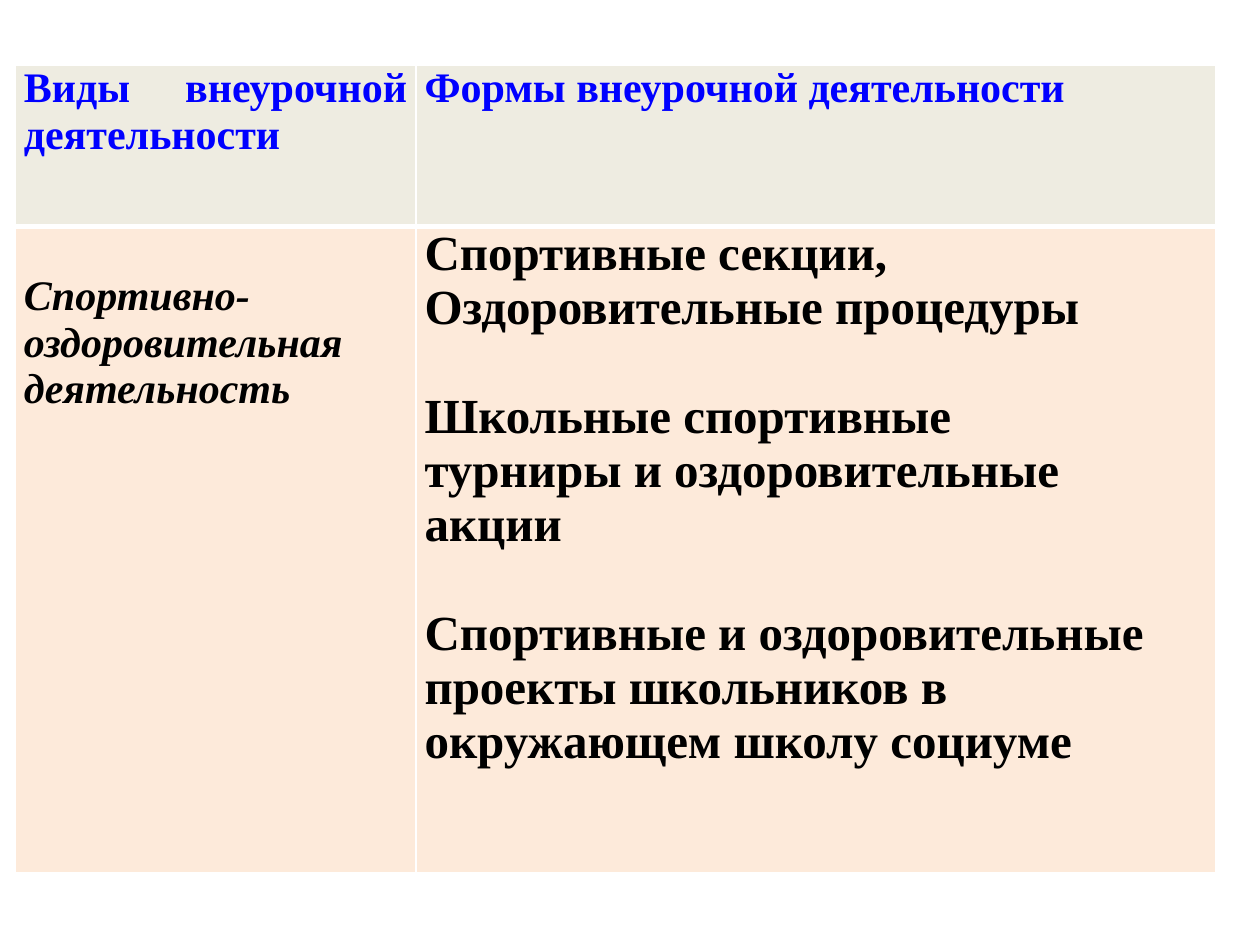
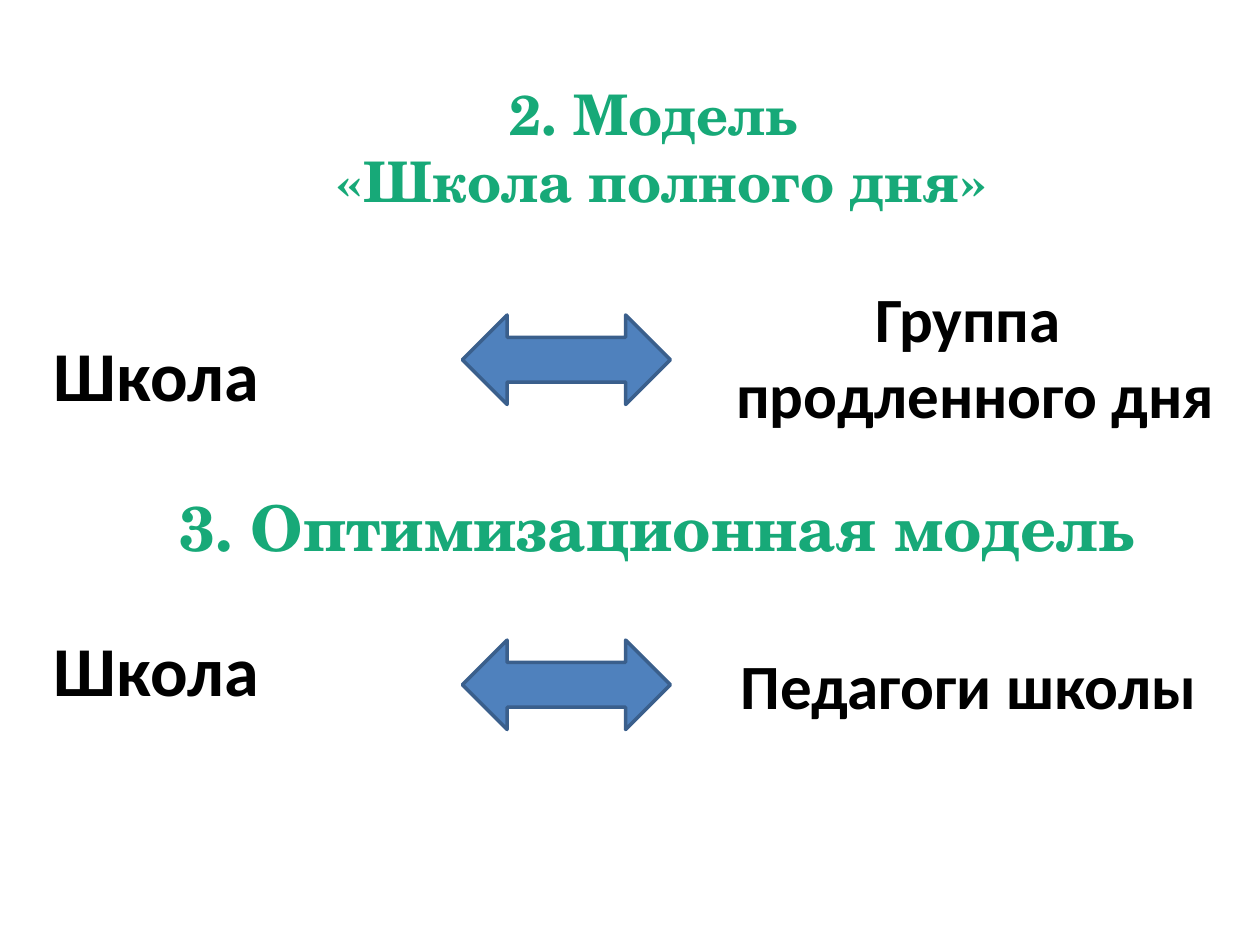
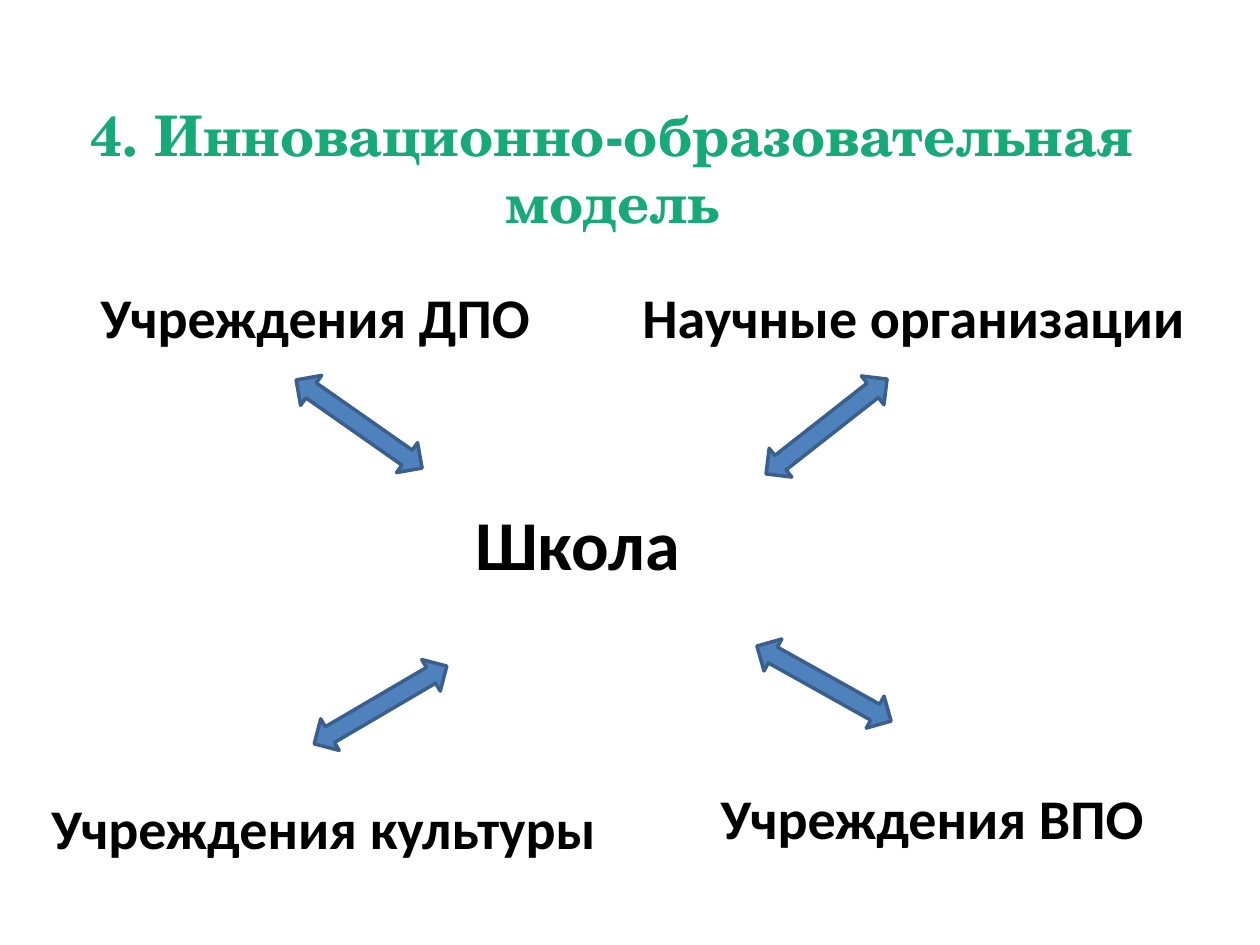
from dataclasses import dataclass

from lxml import etree
from pptx import Presentation
from pptx.dml.color import RGBColor
from pptx.enum.shapes import MSO_SHAPE
from pptx.enum.text import MSO_AUTO_SIZE, PP_ALIGN
from pptx.oxml.ns import qn
from pptx.slide import Slide
from pptx.table import _Cell
from pptx.util import Inches, Pt

ARROW = MSO_SHAPE.LEFT_RIGHT_ARROW
GROW = MSO_AUTO_SIZE.SHAPE_TO_FIT_TEXT
LEFT, CENTER, JUSTIFY = PP_ALIGN.LEFT, PP_ALIGN.CENTER, PP_ALIGN.JUSTIFY

COLORS = {
    "title": "17A978",
    "text": "000000",
    "head": "0000FF",
    "head_fill": "EEECE1",
    "body_fill": "FDEADA",
    "border": "FFFFFF",
    "arrow": "4F81BD",
    "edge": "3A5F8C",
}


@dataclass(frozen=True)
class Style:
    font: str
    size: int
    color: str
    italic: bool = False


@dataclass(frozen=True)
class Label:
    lines: tuple[str, ...]
    left: float
    top: float
    width: float
    height: float
    style: Style
    align: PP_ALIGN = CENTER
    wrap: bool = True


@dataclass(frozen=True)
class Arrow:
    left: float
    top: float
    width: float
    height: float
    angle: float = 0


@dataclass(frozen=True)
class Entry:
    lines: tuple[str, ...]
    style: Style
    fill: str
    align: PP_ALIGN = JUSTIFY
    top: float = 0
    gaps: tuple[int, ...] = ()


TITLE = Style("TeX Gyre Schola", 32, "title")
TITLE_BIG = Style("TeX Gyre Schola", 36, "title")
SCHOOL = Style("Calibri", 40, "text")
PARTNER = Style("Calibri", 36, "text")
BODY = Style("Calibri", 32, "text")
HEAD = Style("Times New Roman", 24, "head")
KIND = Style("Times New Roman", 24, "text", italic=True)
FORM = Style("Times New Roman", 28, "text")

COLS = (3.18, 6.35)
ROWS = (1.28, 5.13)
GAP = 31
ENTRIES = (
    (
        Entry(("Виды внеурочной деятельности",), HEAD, "head_fill"),
        Entry(("Формы внеурочной деятельности",), HEAD, "head_fill"),
    ),
    (
        Entry(("Спортивно-оздоровительная деятельность",), KIND, "body_fill", top=0.37),
        Entry(
            (
                "Спортивные секции,",
                "Оздоровительные процедуры",
                "Школьные спортивные",
                "турниры и оздоровительные акции",
                "Спортивные и оздоровительные",
                "проекты школьников в окружающем школу социуме",
            ),
            FORM, "body_fill", LEFT, gaps=(2, 4),
        ),
    ),
)

MODELS = (
    Label(("2. Модель ", "«Школа полного дня»"), 1.5, 0.58, 7.5, 1.17, TITLE),
    Label(("Школа",), 0.33, 2.58, 2.26, 0.77, SCHOOL, LEFT),
    Label(("Группа ", "продленного дня"), 5.67, 2.17, 4.14, 1.3, PARTNER),
    Arrow(3.67, 2.5, 1.65, 0.71),
    Label(("3. Оптимизационная модель",), 0.67, 3.83, 9.08, 0.7, TITLE_BIG),
    Label(("Школа",), 0.33, 4.92, 2, 0.77, SCHOOL, LEFT),
    Label(("Педагоги школы",), 5.78, 5.08, 4.22, 0.7, PARTNER, LEFT),
    Arrow(3.67, 5.08, 1.65, 0.71),
)


def partner(name: str, left: float, top: float, width: float) -> Label:
    return Label((name,), left, top, width, 0.64, BODY, LEFT, wrap=False)


def link(left: float, top: float, angle: float) -> Arrow:
    return Arrow(left, top, 1.22, 0.29, angle)


NETWORK = (
    Label(("4. Инновационно-образовательная модель",), 0.33, 0.75, 9.06, 1.17, TITLE),
    link(5.95, 3.24, 141.9),
    partner("Учреждения ВПО", 5.62, 6.17, 3.59),
    link(2.24, 3.22, 35),
    link(2.41, 5.45, 329.6),
    partner("Учреждения культуры", 0.31, 6.25, 4.67),
    partner("Учреждения ДПО", 0.7, 2.19, 3.64),
    link(5.93, 5.28, 209.2),
    partner("Научные организации", 5, 2.19, 4.55),
    Label(("Школа",), 3.17, 3.92, 2.83, 0.77, SCHOOL),
)


def tint(name: str) -> RGBColor:
    return RGBColor.from_string(COLORS[name])


def write(frame, lines: tuple[str, ...], style: Style, align: PP_ALIGN,
          gaps: tuple[int, ...] = ()) -> None:
    """Fill a text frame; gaps lists the lines set apart from the one above."""
    for i, line in enumerate(lines):
        para = frame.paragraphs[0] if i == 0 else frame.add_paragraph()
        para.alignment = align
        if i in gaps:
            para.space_before = Pt(GAP)
        run = para.add_run()
        run.text = line
        font = run.font
        font.name, font.size = style.font, Pt(style.size)
        font.bold, font.italic = True, style.italic
        font.color.rgb = tint(style.color)


def add_label(slide: Slide, label: Label) -> None:
    box = slide.shapes.add_textbox(
        Inches(label.left), Inches(label.top), Inches(label.width), Inches(label.height))
    frame = box.text_frame
    frame.word_wrap = label.wrap
    frame.auto_size = GROW
    write(frame, label.lines, label.style, label.align)


def add_arrow(slide: Slide, arrow: Arrow) -> None:
    shape = slide.shapes.add_shape(
        ARROW, Inches(arrow.left), Inches(arrow.top), Inches(arrow.width), Inches(arrow.height))
    shape.rotation = arrow.angle
    shape.shadow.inherit = False
    shape.fill.solid()
    shape.fill.fore_color.rgb = tint("arrow")
    shape.line.color.rgb = tint("edge")
    shape.line.width = Pt(2)


def add_edges(cell: _Cell, row: int) -> None:
    """Draw thin cell borders, with a thick one between head and body."""
    props = cell._tc.get_or_add_tcPr()
    thick = "lnB" if row == 0 else "lnT"
    for side in ("lnL", "lnR", "lnT", "lnB"):
        line = etree.SubElement(props, qn(f"a:{side}"), w=str(Pt(3 if side == thick else 1)))
        fill = etree.SubElement(line, qn("a:solidFill"))
        etree.SubElement(fill, qn("a:srgbClr"), val=COLORS["border"])


def add_forms(slide: Slide) -> None:
    """Add the table of activity kinds and forms."""
    table = slide.shapes.add_table(
        len(ROWS), len(COLS), Inches(0.12), Inches(0.52),
        Inches(sum(COLS)), Inches(sum(ROWS))).table
    for col, width in zip(table.columns, COLS):
        col.width = Inches(width)
    for row, height in zip(table.rows, ROWS):
        row.height = Inches(height)
    for r, entries in enumerate(ENTRIES):
        for c, entry in enumerate(entries):
            cell = table.cell(r, c)
            add_edges(cell, r)
            cell.fill.solid()
            cell.fill.fore_color.rgb = tint(entry.fill)
            cell.margin_left = cell.margin_right = Inches(0.07)
            cell.margin_top, cell.margin_bottom = Inches(entry.top), 0
            write(cell.text_frame, entry.lines, entry.style, entry.align, entry.gaps)


def add_scheme(slide: Slide, items: tuple[Label | Arrow, ...]) -> None:
    for item in items:
        if isinstance(item, Label):
            add_label(slide, item)
        else:
            add_arrow(slide, item)


def main() -> None:
    deck = Presentation()
    deck.slide_width, deck.slide_height = Inches(10), Inches(7.5)
    blank = deck.slide_layouts[6]
    add_forms(deck.slides.add_slide(blank))
    for items in (MODELS, NETWORK):
        add_scheme(deck.slides.add_slide(blank), items)
    deck.save("out.pptx")


if __name__ == "__main__":
    main()
